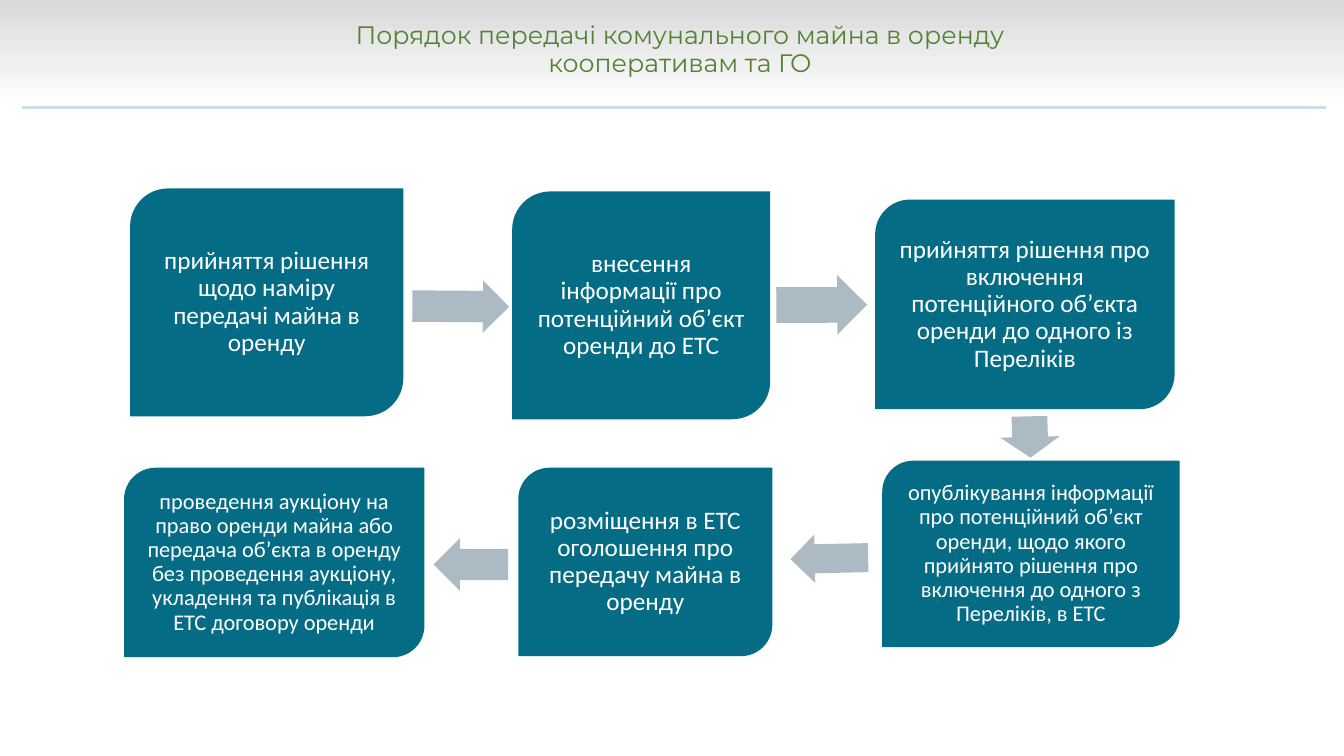
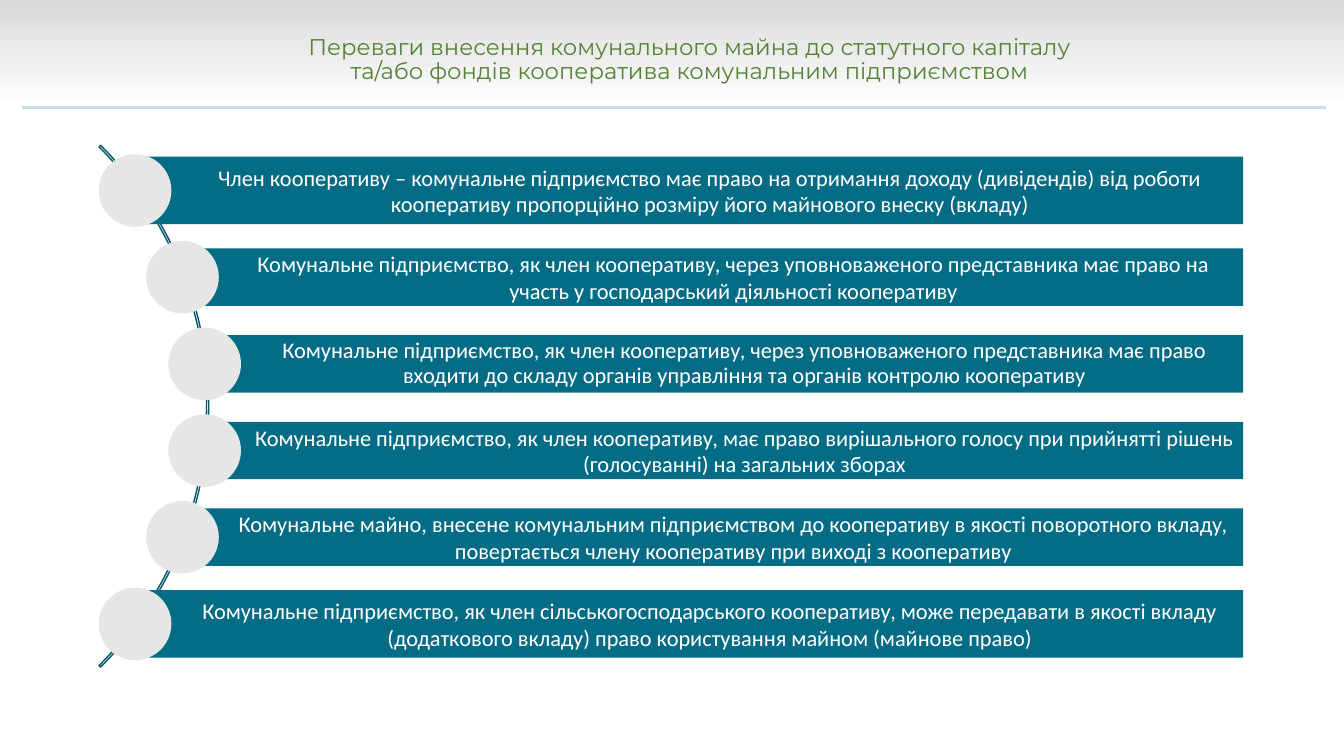
"""Build two slides on leasing communal property to cooperatives."""
from lxml import etree
from pptx import Presentation
from pptx import util as u
from pptx.dml.color import RGBColor
from pptx.enum import shapes, text
from pptx.oxml import ns

WIDE, HIGH = 13.33, 7.5
TEAL, DARK, GREEN, STEEL = "056C86", "04566B", "548235", "ABBAC3"
WHITE, GREY, DOT, RULE = "FFFFFF", "D9D9D9", "E7E6E6", "C9DFE6"
KIND = shapes.MSO_SHAPE

HEADS = [
    ("Порядок передачі комунального майна в оренду кооперативам та ГО",
     18, (2.87, 0.19, 7.75, 0.62)),
    ("Переваги внесення комунального майна до статутного капіталу та/або фондів "
     "кооператива комунальним підприємством",
     16.2, (2.87, 0.19, 7.93, 0.81)),
]
STEPS = [
    ("прийняття рішення щодо наміру передачі майна в оренду",
     18, (1.29, 1.87, 2.71, 2.26)),
    ("внесення інформації про потенційний об’єкт оренди до ЕТС",
     18, (5.08, 1.9, 2.56, 2.26)),
    ("прийняття рішення про включення потенційного об’єкта оренди до одного із Переліків",
     18, (8.68, 1.98, 2.97, 2.08)),
    ("опублікування інформації про потенційний об’єкт оренди, щодо якого прийнято "
     "рішення про включення до одного з Переліків, в ЕТС",
     16, (8.75, 4.57, 2.95, 1.85)),
    ("розміщення в ЕТС оголошення про передачу майна в оренду",
     18, (5.14, 4.64, 2.52, 1.87)),
    ("проведення аукціону на право оренди майна або передача об’єкта в оренду без "
     "проведення аукціону, укладення та публікація в ЕТС договору оренди",
     16, (1.23, 4.64, 2.98, 1.88)),
]
ARROWS = [
    ((4.09, 2.78, 0.96, 0.52), 0.4),
    ((7.7, 2.73, 0.9, 0.59), 359.8),
    ((10.01, 4.04, 0.41, 0.59), 88.5),
    ((7.84, 5.3, 0.77, 0.48), 178.8),
    ((4.3, 5.34, 0.74, 0.52), 180),
]
GAINS = [
    ("Член кооперативу – комунальне підприємство має право на отримання доходу "
     "(дивідендів) від роботи кооперативу пропорційно розміру його майнового внеску (вкладу)",
     1.34, 0.67, 1),
    ("Комунальне підприємство, як член кооперативу, через уповноваженого представника "
     "має право на участь у господарський діяльності кооперативу",
     1.81, 0.57, 1),
    ("Комунальне підприємство, як член кооперативу, через уповноваженого представника "
     "має право входити до складу органів управління та органів контролю кооперативу",
     2.03, 0.57, 0.9),
    ("Комунальне підприємство, як член кооперативу, має право вирішального голосу "
     "при прийнятті рішень (голосуванні) на загальних зборах",
     2.03, 0.57, 1),
    ("Комунальне майно, внесене комунальним підприємством до кооперативу в якості "
     "поворотного вкладу, повертається члену кооперативу при виході з кооперативу",
     1.81, 0.57, 1),
    ("Комунальне підприємство, як член сільськогосподарського кооперативу, може "
     "передавати в якості вкладу (додаткового вкладу) право користування майном (майнове право)",
     1.34, 0.67, 1),
]
FIRST, PITCH, RIGHT, DISC = 1.89, 0.86, 12.33, 0.72


def tint(code):
    return RGBColor.from_string(code)


def write(shape, words, size=16, font="Calibri", color=WHITE, lead=0.9,
          pad=(0.07, 0.07, 0.07, 0.07)):
    frame = shape.text_frame
    frame.word_wrap = True
    frame.auto_size = text.MSO_AUTO_SIZE.NONE
    frame.vertical_anchor = text.MSO_ANCHOR.MIDDLE
    (frame.margin_left, frame.margin_top,
     frame.margin_right, frame.margin_bottom) = map(u.Inches, pad)
    frame.text = words
    para = frame.paragraphs[0]
    para.alignment = text.PP_ALIGN.CENTER
    para.line_spacing = lead
    para.font.size, para.font.name = u.Pt(size), font
    para.font.bold = False
    para.font.color.rgb = tint(color)


def draw(slide, kind, box, fill=None, line=None, turn=0, bends=()):
    shape = slide.shapes.add_shape(kind, *map(u.Inches, box))
    shape.shadow.inherit = False
    shape.rotation = turn
    for spot, bend in enumerate(bends):
        shape.adjustments[spot] = bend
    if fill:
        shape.fill.solid()
        shape.fill.fore_color.rgb = tint(fill)
    else:
        shape.fill.background()
    if line:
        shape.line.color.rgb = tint(line)
        shape.line.width = u.Pt(1)
    else:
        shape.line.fill.background()
    return shape


def brand(slide):
    """Place the shared band and rule on the layout."""
    band = draw(slide, KIND.RECTANGLE, (0, 0, WIDE, 1.05))
    band.fill.gradient()
    band.fill.gradient_angle = 270
    for stop, code, place in zip(band.fill.gradient_stops, (GREY, WHITE), (0, 1)):
        stop.color.rgb, stop.position = tint(code), place
    rule = slide.shapes.add_connector(
        shapes.MSO_CONNECTOR.STRAIGHT, *map(u.Inches, (0.22, 1.07, 13.15, 1.07)))
    rule.line.color.rgb, rule.line.width = tint(RULE), u.Pt(2)
    etree.SubElement(rule.element.spPr, ns.qn("a:effectLst"))
    tree = slide.slide_layout.shapes.element
    for spot, part in enumerate((band, rule), 2):
        tree.insert(spot, part.element)


def start(deck, head):
    words, size, box = head
    slide = deck.slides.add_slide(deck.slide_layouts[5])
    title = slide.shapes.title
    title.left, title.top, title.width, title.height = map(u.Inches, box)
    write(title, words, size, "Montserrat", GREEN, pad=(0.1, 0.05, 0.1, 0.05))
    return slide


def flow(slide):
    for words, size, box in STEPS:
        write(draw(slide, KIND.ROUND_2_DIAG_RECTANGLE, box, TEAL), words, size)
    for box, turn in ARROWS:
        draw(slide, KIND.RIGHT_ARROW, box, STEEL, turn=turn, bends=(0.6, 0.5))


def gains(slide):
    draw(slide, KIND.BLOCK_ARC, (-5.25, 0.37, 7.32, 7.32), line=DARK,
         bends=(189, 27, 0.003))
    for row, (words, left, tall, lead) in enumerate(GAINS):
        mid = FIRST + row * PITCH
        bar = draw(slide, KIND.RECTANGLE, (left, mid - tall / 2, RIGHT - left, tall), TEAL)
        write(bar, words, lead=lead, pad=(0.45, 0.04, 0.04, 0.04))
        draw(slide, KIND.OVAL, (left - DISC / 2, mid - DISC / 2, DISC, DISC), DOT)


def main():
    deck = Presentation()
    deck.slide_width, deck.slide_height = u.Inches(WIDE), u.Inches(HIGH)
    pages = [start(deck, head) for head in HEADS]
    brand(pages[0])
    for fill, page in zip((flow, gains), pages):
        fill(page)
    deck.save("out.pptx")


if __name__ == "__main__":
    main()
